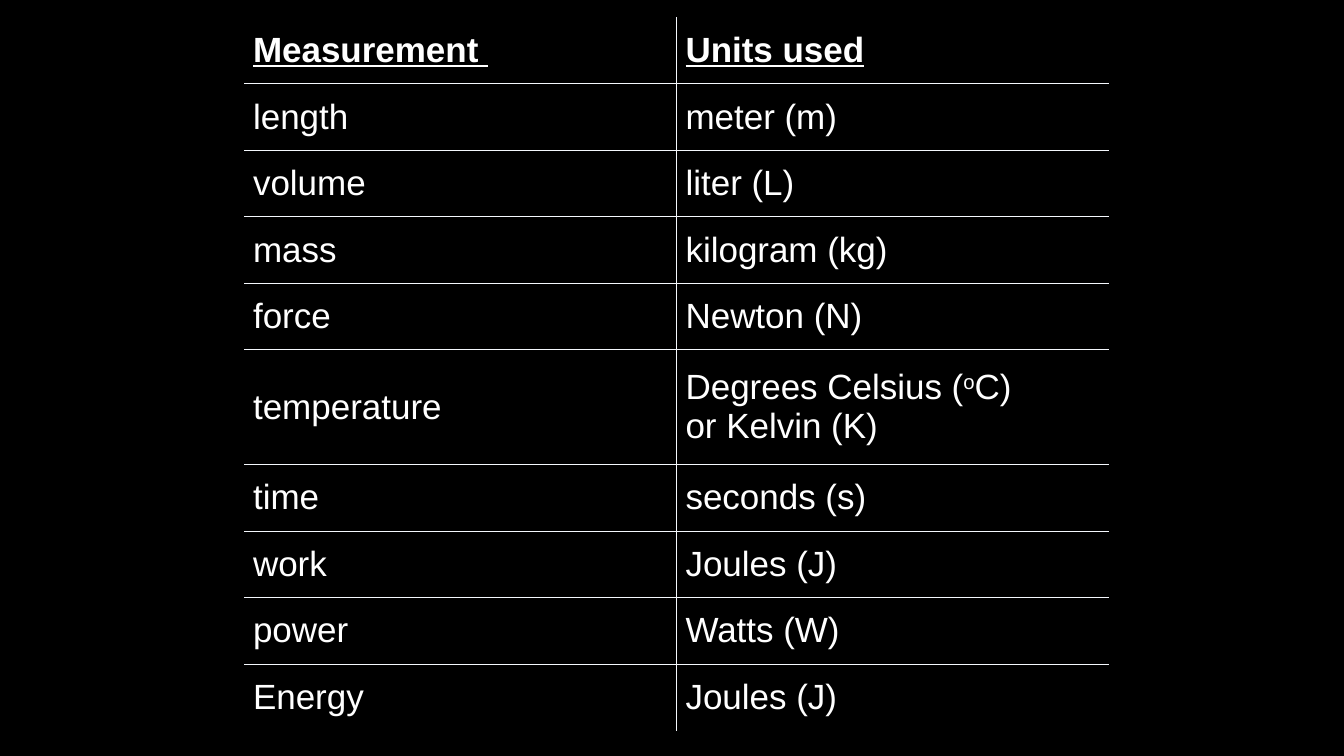
import pptx
import pptx.dml.color
import pptx.enum.text
import pptx.oxml
import pptx.oxml.ns
import pptx.util

Inches, Pt = pptx.util.Inches, pptx.util.Pt
RGBColor = pptx.dml.color.RGBColor

BLACK = RGBColor(0x00, 0x00, 0x00)
WHITE = RGBColor(0xFF, 0xFF, 0xFF)
RULE = RGBColor(0xF4, 0xF7, 0xFC)

# Grid, in inches
SLIDE_W, SLIDE_H = 13.33, 7.5
LEFT, TOP = 2.42, 0.17
COL_W = 4.29
ROW_H, TALL_ROW_H = 0.66, 1.14

TEXT = {"size": Pt(25), "name": "Arial"}
HEADER = {"bold": True, "underline": True}
BODY = {"bold": False, "underline": False}
CELL = {
    "margin_left": Inches(0.09), "margin_right": Inches(0.09),
    "margin_top": Inches(0.04), "margin_bottom": Inches(0.04),
    "vertical_anchor": pptx.enum.text.MSO_ANCHOR.MIDDLE,
}

# A cell is a list of paragraphs, a paragraph a list of runs;
# a run starting with ^ is superscript
ROWS = [
    ([["Measurement", " "]], [["Units used"]]),
    ([["length"]], [["meter (m)"]]),
    ([["volume"]], [["liter (L)"]]),
    ([["mass"]], [["kilogram (kg)"]]),
    ([["force"]], [["Newton (N)"]]),
    ([["temperature"]], [["Degrees Celsius (", "^o", "C)"], ["or Kelvin (K)"]]),
    ([["time"]], [["seconds (s)"]]),
    ([["work"]], [["Joules (J)"]]),
    ([["power"]], [["Watts (W)"]]),
    ([["Energy"]], [["Joules (J)"]]),
]


def set_format(obj, values):
    for name, value in values.items():
        setattr(obj, name, value)


def add_run(p, text, style):
    r = p.add_run()
    r.text = text.lstrip("^")
    set_format(r.font, {**TEXT, **style})
    r.font.color.rgb = WHITE
    if text.startswith("^"):
        r.font.size = TEXT["size"]
        r._r.get_or_add_rPr().set("baseline", "30000")
    if not text.strip():
        r.font.bold = False


def set_borders(cell, ruled):
    """Rule the named sides (L, R, T, B) and clear the others."""
    tc_pr = cell._tc.get_or_add_tcPr()
    for side in "LRTB":
        fill = (f'<a:solidFill><a:srgbClr val="{RULE}"/></a:solidFill>'
                if side in ruled else "<a:noFill/>")
        tc_pr.append(pptx.oxml.parse_xml(
            f'<a:ln{side} {pptx.oxml.ns.nsdecls("a")} w="{Pt(0.75)}">'
            f'{fill}</a:ln{side}>'))


def fill_cell(cell, paragraphs, style, ruled):
    set_format(cell, CELL)
    set_borders(cell, ruled)
    cell.fill.solid()
    cell.fill.fore_color.rgb = BLACK
    tf = cell.text_frame
    for i, runs in enumerate(paragraphs):
        p = tf.add_paragraph() if i else tf.paragraphs[0]
        for text in runs:
            add_run(p, text, style)


def add_units_table(slide):
    heights = [TALL_ROW_H if len(units) > 1 else ROW_H for _, units in ROWS]
    table = slide.shapes.add_table(
        len(ROWS), 2, Inches(LEFT), Inches(TOP),
        Inches(2 * COL_W), Inches(sum(heights))).table
    set_format(table, {"first_row": False, "horz_banding": False})
    for col in table.columns:
        col.width = Inches(COL_W)
    for i, (row, height) in enumerate(zip(ROWS, heights)):
        table.rows[i].height = Inches(height)
        # Only inner rules show
        across = ("T" if i else "") + ("B" if i < len(ROWS) - 1 else "")
        for j, paragraphs in enumerate(row):
            fill_cell(table.cell(i, j), paragraphs,
                      BODY if i else HEADER, across + "RL"[j])


def main():
    prs = pptx.Presentation()
    set_format(prs, {"slide_width": Inches(SLIDE_W),
                     "slide_height": Inches(SLIDE_H)})
    slide = prs.slides.add_slide(prs.slide_layouts[6])

    # Black background
    slide.background.fill.solid()
    slide.background.fill.fore_color.rgb = BLACK

    add_units_table(slide)
    prs.save("out.pptx")


if __name__ == "__main__":
    main()
